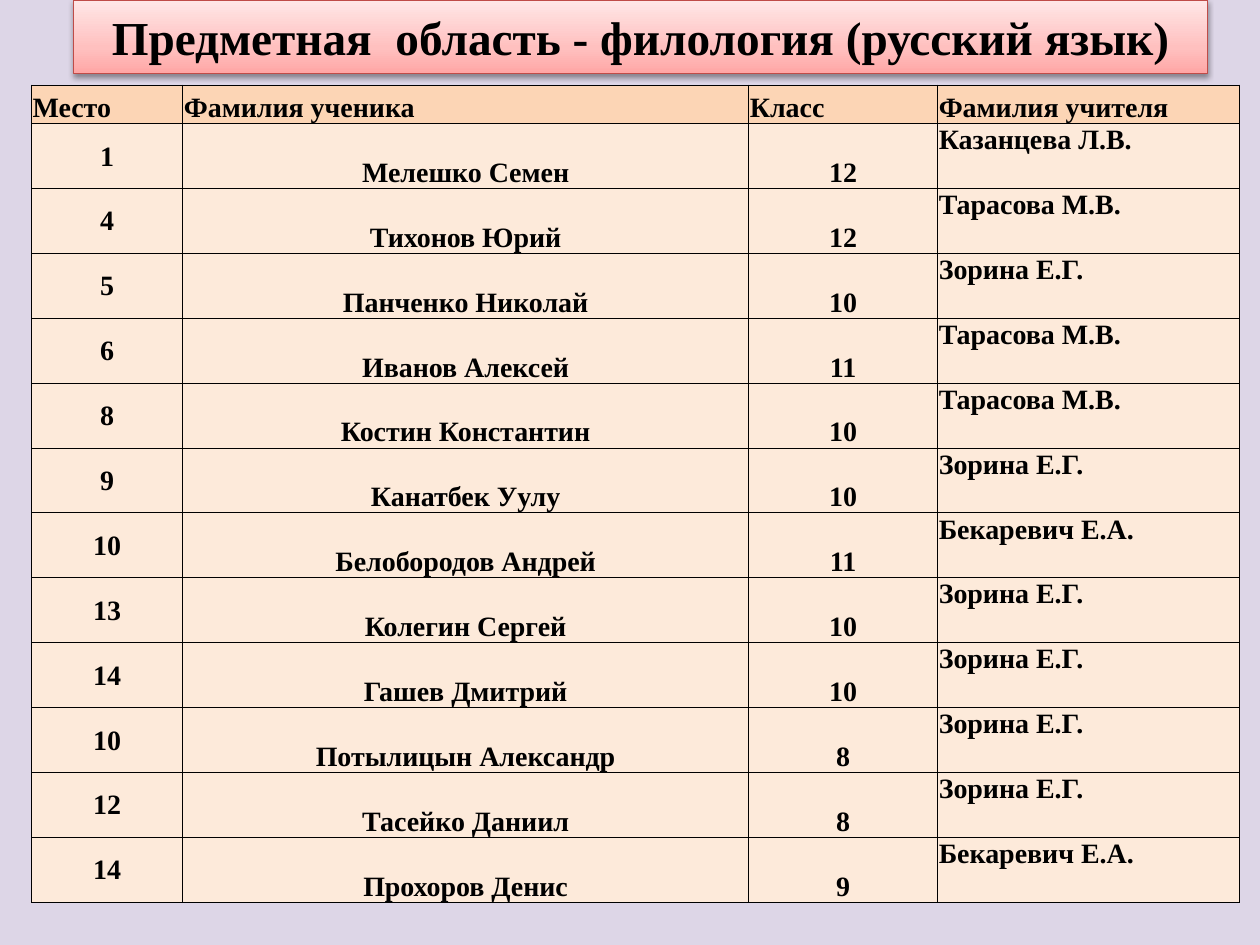
from dataclasses import dataclass

from lxml.etree import SubElement
from pptx import Presentation
from pptx.dml.color import RGBColor as Rgb
from pptx.enum.text import MSO_ANCHOR as Anchor, MSO_AUTO_SIZE as Auto, PP_ALIGN as Align
from pptx.oxml.ns import qn
from pptx.util import Pt


@dataclass(frozen=True)
class Theme:
    font: str = "Times New Roman"
    back: str = "DDD6E7"
    ink: str = "000000"
    edge: str = "BF4C48"
    head: str = "FCD5B5"
    body: str = "FDEADA"
    glow: tuple = ((0, "FFA6A5"), (35, "FFC0BF"), (100, "FFE7E7"))
    title_size: int = 27
    cell_size: int = 16


THEME = Theme()
TITLE = "Предметная  область - филология (русский язык)"
HEADS = ("Место", "Фамилия ученика", "Класс", "Фамилия учителя")
PUPILS = (
    ("1", "Мелешко Семен", "12", "Казанцева Л.В."),
    ("4", "Тихонов Юрий", "12", "Тарасова М.В."),
    ("5", "Панченко Николай", "10", "Зорина Е.Г."),
    ("6", "Иванов Алексей", "11", "Тарасова М.В."),
    ("8", "Костин Константин", "10", "Тарасова М.В."),
    ("9", "Канатбек Уулу", "10", "Зорина Е.Г."),
    ("10", "Белобородов Андрей", "11", "Бекаревич Е.А."),
    ("13", "Колегин Сергей", "10", "Зорина Е.Г."),
    ("14", "Гашев Дмитрий", "10", "Зорина Е.Г."),
    ("10", "Потылицын Александр", "8", "Зорина Е.Г."),
    ("12", "Тасейко Даниил", "8", "Зорина Е.Г."),
    ("14", "Прохоров Денис", "9", "Бекаревич Е.А."),
)
WIDTHS = (86.4, 323.4, 108, 172.6)
HEAD_H, ROW_H = 22, 37.08
HEAD_STYLE = (Align.LEFT, Anchor.BOTTOM)
BODY_STYLES = (
    (Align.CENTER, Anchor.MIDDLE),
    (Align.CENTER, Anchor.BOTTOM),
    (Align.CENTER, Anchor.BOTTOM),
    (Align.LEFT, Anchor.TOP),
)


def style_text(frame, size, align):
    for para in frame.paragraphs:
        para.alignment = align
        for run in para.runs:
            font = run.font
            font.name, font.size, font.bold = THEME.font, Pt(size), True
            font.color.rgb = Rgb.from_string(THEME.ink)


def add_color(parent, color):
    return SubElement(parent, qn("a:srgbClr"), val=color)


def fill_glow(shape):
    """Fill with the theme's gradient, running from bottom to top."""
    shape.fill.gradient()
    shape.fill.gradient_angle = 90
    stops = shape.element.spPr.find(".//" + qn("a:gsLst"))
    for stop in list(stops):
        stops.remove(stop)
    for pos, color in THEME.glow:
        add_color(SubElement(stops, qn("a:gs"), pos=str(pos * 1000)), color)


def add_shadow(shape):
    effects = SubElement(shape.element.spPr, qn("a:effectLst"))
    outer = SubElement(effects, qn("a:outerShdw"), blurRad=str(Pt(3.1)),
                       dist=str(Pt(1.6)), dir="5400000", rotWithShape="0")
    SubElement(add_color(outer, THEME.ink), qn("a:alpha"), val="38000")


def set_title(slide):
    title = slide.shapes.title
    title.left, title.top, title.width, title.height = Pt(42), Pt(0), Pt(648), Pt(42)
    fill_glow(title)
    title.line.color.rgb = Rgb.from_string(THEME.edge)
    title.line.width = Pt(0.75)
    add_shadow(title)
    frame = title.text_frame
    frame.text = TITLE
    frame.auto_size = Auto.NONE
    frame.vertical_anchor = Anchor.MIDDLE
    style_text(frame, THEME.title_size, Align.CENTER)


def add_borders(cell):
    props = cell._tc.get_or_add_tcPr()
    for spot, side in enumerate(("a:lnL", "a:lnR", "a:lnT", "a:lnB")):
        line = props.makeelement(qn(side), w=str(Pt(0.5)))
        add_color(SubElement(line, qn("a:solidFill")), THEME.ink)
        props.insert(spot, line)


def set_cell(cell, text, fill, align, anchor):
    cell.text = text
    cell.vertical_anchor = anchor
    cell.margin_left = cell.margin_right = cell.margin_top = Pt(0.7)
    cell.margin_bottom = Pt(0)
    cell.fill.solid()
    cell.fill.fore_color.rgb = Rgb.from_string(fill)
    style_text(cell.text_frame, THEME.cell_size, align)
    add_borders(cell)


def add_results(slide):
    count = len(PUPILS) + 1
    table = slide.shapes.add_table(
        count, len(HEADS), Pt(18), Pt(48.6), Pt(sum(WIDTHS)),
        Pt(HEAD_H + ROW_H * len(PUPILS))).table
    for col, width in zip(table.columns, WIDTHS):
        col.width = Pt(width)
    for r, texts in enumerate((HEADS, *PUPILS)):
        table.rows[r].height = Pt(ROW_H if r else HEAD_H)
        for c, text in enumerate(texts):
            align, anchor = BODY_STYLES[c] if r else HEAD_STYLE
            fill = THEME.body if r else THEME.head
            set_cell(table.cell(r, c), text, fill, align, anchor)


def main():
    deck = Presentation()
    deck.slide_width, deck.slide_height = Pt(720), Pt(540)
    slide = deck.slides.add_slide(deck.slide_layouts[5])
    back = slide.background.fill
    back.solid()
    back.fore_color.rgb = Rgb.from_string(THEME.back)
    set_title(slide)
    add_results(slide)
    deck.save("out.pptx")


if __name__ == "__main__":
    main()
